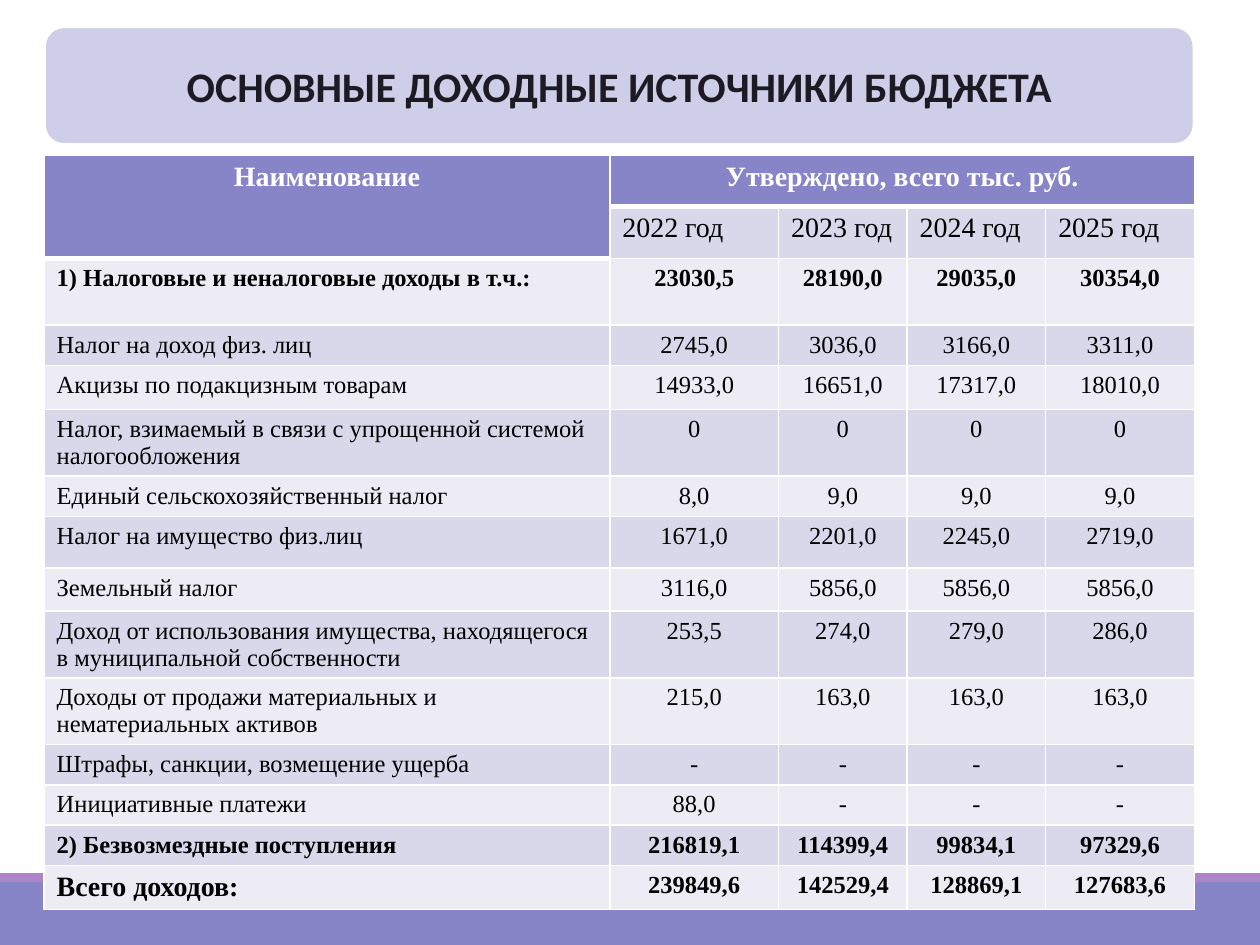
import pptx
import pptx.util
import pptx.dml.color
import pptx.enum.shapes
import pptx.enum.text
import pptx.oxml.ns
import lxml.etree

INCH = pptx.util.Inches
ALIGN = pptx.enum.text.PP_ALIGN
SHAPE = pptx.enum.shapes.MSO_SHAPE
COLORS = {
    "main": "8784C7", "strip": "AD84C6", "panel": "CFCEE9", "ink": "1C1B23",
    "dark": "D9D8EA", "light": "EDECF5", "white": "FFFFFF", "black": "000000",
}

# Content
TITLE = "ОСНОВНЫЕ ДОХОДНЫЕ ИСТОЧНИКИ БЮДЖЕТА"
HEADS = [
    ("Наименование", "Утверждено, всего тыс. руб.", "", "", ""),
    ("", "2022 год", "2023 год", "2024 год", "2025 год"),
]
INCOME = [
    ("1) Налоговые и неналоговые доходы в т.ч.:", "23030,5", "28190,0", "29035,0", "30354,0"),
    ("Налог на доход физ. лиц", "2745,0", "3036,0", "3166,0", "3311,0"),
    ("Акцизы по подакцизным товарам", "14933,0", "16651,0", "17317,0", "18010,0"),
    ("Налог, взимаемый в связи с упрощенной системой налогообложения", "0", "0", "0", "0"),
    ("Единый сельскохозяйственный налог", "8,0", "9,0", "9,0", "9,0"),
    ("Налог на имущество физ.лиц", "1671,0", "2201,0", "2245,0", "2719,0"),
    ("Земельный налог", "3116,0", "5856,0", "5856,0", "5856,0"),
    ("Доход от использования имущества, находящегося в муниципальной собственности",
     "253,5", "274,0", "279,0", "286,0"),
    ("Доходы от продажи материальных и нематериальных активов",
     "215,0", "163,0", "163,0", "163,0"),
    ("Штрафы, санкции, возмещение ущерба", "-", "-", "-", "-"),
    ("Инициативные платежи", "88,0", "-", "-", "-"),
    ("2) Безвозмездные поступления", "216819,1", "114399,4", "99834,1", "97329,6"),
    ("Всего доходов:", "239849,6", "142529,4", "128869,1", "127683,6"),
]
ROWS = HEADS + INCOME
LAST = len(ROWS) - 1
BOLD = {0, 2, LAST - 1, LAST}

# Grid
WIDE, HIGH = 10, 7.5
LEFT, SPAN, TOP = 0.35, 9.13, 1.23
COLS = [4.49, 1.34, 1.02, 1.1, 1.18]
TALL = [0.41, 0.41, 0.53, 0.32, 0.35, 0.53, 0.32, 0.41, 0.34, 0.53, 0.53, 0.32, 0.32, 0.32, 0.35]
HEAD = (LEFT, 0.21, SPAN, 0.94)


def color(name):
    return pptx.dml.color.RGBColor.from_string(COLORS[name])


def paint(part, name):
    part.fill.solid()
    part.fill.fore_color.rgb = color(name)


def block(slide, kind, box, fill):
    shape = slide.shapes.add_shape(kind, *map(INCH, box))
    shape.shadow.inherit = False
    paint(shape, fill)
    shape.line.fill.background()
    return shape


def write(frame, text, font, size, ink, bold, align):
    frame.text = text
    para = frame.paragraphs[0]
    para.alignment = align
    for run in para.runs:
        run.font.name = font
        run.font.size = pptx.util.Pt(size)
        run.font.bold = bold
        run.font.color.rgb = color(ink)


def thick(row, col):
    return row == 0 or (row == 1 and col == 0)


def edge(cell, row, col):
    tag = pptx.oxml.ns.qn
    props = cell._tc.get_or_add_tcPr()
    sides = {"L": 0.96, "R": 0.96,
             "T": 3 if row and thick(row - 1, col) else 0.96,
             "B": 3 if thick(row, col) else 0.96}
    for side, width in sides.items():
        line = lxml.etree.SubElement(props, tag("a:ln" + side), w=str(pptx.util.Pt(width)))
        fill = lxml.etree.SubElement(line, tag("a:solidFill"))
        lxml.etree.SubElement(fill, tag("a:srgbClr"), val=COLORS["white"])


def style(row, col):
    """Fill, ink, size and alignment of one cell."""
    if thick(row, col):
        return "main", "white", 16, ALIGN.CENTER
    fill = "dark" if row % 2 else "light"
    size = 16 if row == 1 or (row == LAST and col == 0) else 14
    align = ALIGN.LEFT if row == 1 or col == 0 else ALIGN.CENTER
    return fill, "black", size, align


def main():
    deck = pptx.Presentation()
    deck.slide_width, deck.slide_height = INCH(WIDE), INCH(HIGH)
    slide = deck.slides.add_slide(deck.slide_layouts[5])

    # Bottom bands
    block(slide, SHAPE.RECTANGLE, (0, 7, WIDE, 0.5), "main")
    block(slide, SHAPE.RECTANGLE, (0, 6.93, WIDE, 0.07), "strip")

    # Title on its panel
    panel = block(slide, SHAPE.ROUNDED_RECTANGLE, HEAD, "panel")
    panel.line.color.rgb = color("white")
    panel.line.width = pptx.util.Pt(2)
    title = slide.shapes.title
    title.left, title.top, title.width, title.height = map(INCH, HEAD)
    write(title.text_frame, TITLE, "Calibri", 24, "ink", True, ALIGN.CENTER)
    title.text_frame.vertical_anchor = pptx.enum.text.MSO_ANCHOR.MIDDLE
    panel._element.addnext(title._element)

    # Income table
    table = slide.shapes.add_table(
        len(ROWS), len(COLS), *map(INCH, (LEFT, TOP, SPAN, sum(TALL)))).table
    table.horz_banding = False
    for col, width in zip(table.columns, COLS):
        col.width = INCH(width)
    for row, height in zip(table.rows, TALL):
        row.height = INCH(height)
    for r, texts in enumerate(ROWS):
        for c, text in enumerate(texts):
            cell = table.cell(r, c)
            fill, ink, size, align = style(r, c)
            write(cell.text_frame, text, "Times New Roman", size, ink, r in BOLD, align)
            edge(cell, r, c)
            paint(cell, fill)
    table.cell(0, 0).merge(table.cell(1, 0))
    table.cell(0, 1).merge(table.cell(0, 4))

    deck.save("out.pptx")


if __name__ == "__main__":
    main()
